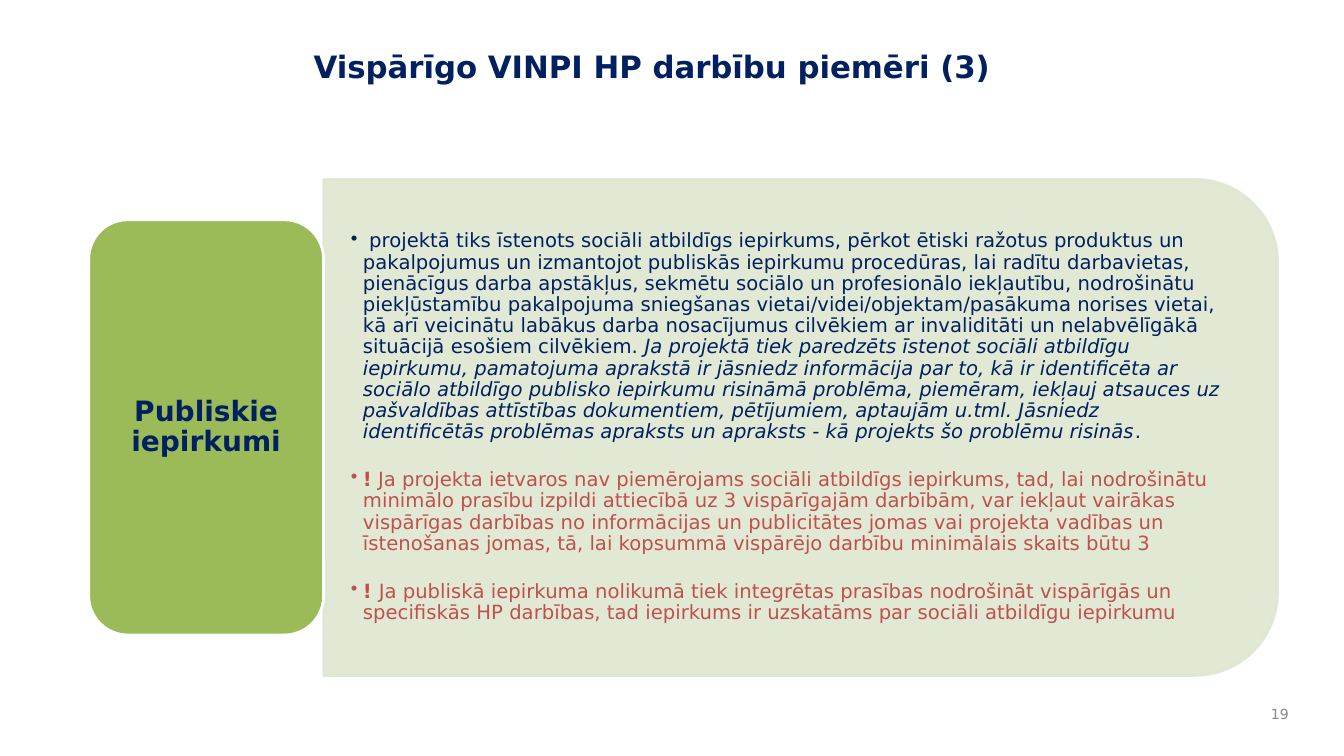
"""Build the slide on public procurement as an example of horizontal-principle actions."""
from dataclasses import dataclass

from lxml.etree import SubElement
from pptx import Presentation
from pptx.dml.color import RGBColor
from pptx.enum.shapes import MSO_SHAPE as Preset
from pptx.enum.text import MSO_ANCHOR as Anchor, MSO_AUTO_SIZE as AutoSize, PP_ALIGN as Align
from pptx.oxml.ns import qn
from pptx.util import Inches, Pt

TITLE = "Vispārīgo VINPI HP darbību piemēri (3)"
LABEL = "Publiskie iepirkumi"
PAGE = "19"
BULLETS = [
    ("navy", [
        (" projektā tiks īstenots sociāli atbildīgs iepirkums, pērkot ētiski ražotus produktus un "
         "pakalpojumus un izmantojot publiskās iepirkumu procedūras, lai radītu darbavietas, "
         "pienācīgus darba apstākļus, sekmētu sociālo un profesionālo iekļautību, nodrošinātu "
         "piekļūstamību pakalpojuma sniegšanas vietai/videi/objektam/pasākuma norises vietai, "
         "kā arī veicinātu labākus darba nosacījumus cilvēkiem ar invaliditāti un nelabvēlīgākā "
         "situācijā esošiem cilvēkiem. ", ""),
        ("Ja projektā tiek paredzēts īstenot sociāli atbildīgu iepirkumu, pamatojuma aprakstā ir "
         "jāsniedz informācija par to, kā ir identificēta ar sociālo atbildīgo publisko iepirkumu "
         "risināmā problēma, piemēram, iekļauj atsauces uz pašvaldības attīstības dokumentiem, "
         "pētījumiem, aptaujām u.tml. Jāsniedz identificētās problēmas apraksts un apraksts - "
         "kā projekts šo problēmu risinās", "italic"),
        (".", ""),
    ]),
    ("red", [
        ("!", "bold"),
        (" Ja projekta ietvaros nav piemērojams sociāli atbildīgs iepirkums, tad, lai nodrošinātu "
         "minimālo prasību izpildi attiecībā uz 3 vispārīgajām darbībām, var iekļaut vairākas "
         "vispārīgas darbības no informācijas un publicitātes jomas vai projekta vadības un "
         "īstenošanas jomas, tā, lai kopsummā vispārējo darbību minimālais skaits būtu 3", ""),
    ]),
    ("red", [
        ("! ", "bold"),
        ("Ja publiskā iepirkuma nolikumā tiek integrētas prasības nodrošināt vispārīgās un "
         "specifiskās HP darbības, tad iepirkums ir uzskatāms par sociāli atbildīgu iepirkumu", ""),
    ]),
]


@dataclass(frozen=True)
class Theme:
    font: str = "DejaVu Sans"
    navy: str = "002060"
    red: str = "C0504D"
    grey: str = "898989"
    green: str = "9BBB59"
    pale: str = "DEE7D1"
    white: str = "FFFFFF"
    title: int = 22
    label: int = 20
    body: int = 14
    page: int = 10
    outline: int = 2
    line_spacing: float = 0.9
    bullet_gap: float = 19.2


THEME = Theme()
WIDTH, HEIGHT = 13.33, 7.5
MIDDLE = 4.24
LABEL_LEFT, LABEL_WIDTH, LABEL_HEIGHT = 0.88, 2.33, 4.12
PANEL_LEFT = LABEL_LEFT + LABEL_WIDTH
PANEL_WIDTH, PANEL_HEIGHT = 9.46, 4.92
TEXT_WIDTH, TEXT_HEIGHT = 9.22, 4.44
INDENT = 0.12


def centred(middle_x, middle_y, width, height):
    return [Inches(value) for value in
            (middle_x - width / 2, middle_y - height / 2, width, height)]


def add_run(paragraph, text, size, color, style=""):
    run = paragraph.add_run()
    run.text = text
    run.font.name = THEME.font
    run.font.size = Pt(size)
    run.font.color.rgb = RGBColor.from_string(color)
    run.font.bold = style == "bold"
    run.font.italic = style == "italic"


def set_frame(frame, anchor, side=0.1, edge=0.05):
    frame.word_wrap = True
    frame.auto_size = AutoSize.NONE
    frame.vertical_anchor = anchor
    frame.margin_left = frame.margin_right = Inches(side)
    frame.margin_top = frame.margin_bottom = Inches(edge)


def add_block(slide, preset, box, fill, line):
    shape = slide.shapes.add_shape(preset, *box)
    shape.shadow.inherit = False
    shape.fill.solid()
    shape.fill.fore_color.rgb = RGBColor.from_string(fill)
    shape.line.color.rgb = RGBColor.from_string(line)
    shape.line.width = Pt(THEME.outline)
    return shape


def add_title(slide):
    title = slide.shapes.title
    title.left, title.top, title.width, title.height = map(Inches, (3.01, 0.42, 9.65, 1.13))
    set_frame(title.text_frame, Anchor.TOP)
    paragraph = title.text_frame.paragraphs[0]
    paragraph.alignment = Align.LEFT
    add_run(paragraph, TITLE, THEME.title, THEME.navy, "bold")


def add_panel(slide):
    middle_x = PANEL_LEFT + PANEL_WIDTH / 2
    panel = add_block(slide, Preset.ROUND_2_SAME_RECTANGLE,
                      centred(middle_x, MIDDLE, PANEL_HEIGHT, PANEL_WIDTH), THEME.pale, THEME.pale)
    panel.rotation = 90
    for color in panel._element.spPr.iter(qn("a:srgbClr")):
        SubElement(color, qn("a:alpha"), val="90000")


def add_bullets(slide):
    box = centred(PANEL_LEFT + TEXT_WIDTH / 2, MIDDLE, TEXT_WIDTH, TEXT_HEIGHT)
    frame = slide.shapes.add_textbox(*box).text_frame
    set_frame(frame, Anchor.MIDDLE, 0.27, 0.14)
    for index, (color, runs) in enumerate(BULLETS):
        paragraph = frame.add_paragraph() if index else frame.paragraphs[0]
        paragraph.line_spacing = THEME.line_spacing
        paragraph.space_after = Pt(THEME.bullet_gap)
        properties = paragraph._p.get_or_add_pPr()
        properties.set("marL", str(Inches(INDENT)))
        properties.set("indent", str(-Inches(INDENT)))
        SubElement(properties, qn("a:buChar"), char="•")
        for text, style in runs:
            add_run(paragraph, text, THEME.body, getattr(THEME, color), style)


def add_label(slide):
    box = centred(LABEL_LEFT + LABEL_WIDTH / 2, MIDDLE, LABEL_WIDTH, LABEL_HEIGHT)
    label = add_block(slide, Preset.ROUNDED_RECTANGLE, box, THEME.green, THEME.white)
    set_frame(label.text_frame, Anchor.MIDDLE, 0.08, 0.04)
    paragraph = label.text_frame.paragraphs[0]
    paragraph.alignment = Align.CENTER
    paragraph.line_spacing = THEME.line_spacing
    add_run(paragraph, LABEL, THEME.label, THEME.navy, "bold")


def add_page_number(slide):
    frame = slide.shapes.add_textbox(*map(Inches, (12.44, 6.92, 0.44, 0.33))).text_frame
    set_frame(frame, Anchor.MIDDLE)
    paragraph = frame.paragraphs[0]
    paragraph.alignment = Align.RIGHT
    add_run(paragraph, PAGE, THEME.page, THEME.grey)


def main():
    presentation = Presentation()
    presentation.slide_width, presentation.slide_height = Inches(WIDTH), Inches(HEIGHT)
    slide = presentation.slides.add_slide(presentation.slide_layouts[5])
    for add_part in (add_title, add_panel, add_bullets, add_label, add_page_number):
        add_part(slide)
    presentation.save("out.pptx")


if __name__ == "__main__":
    main()
